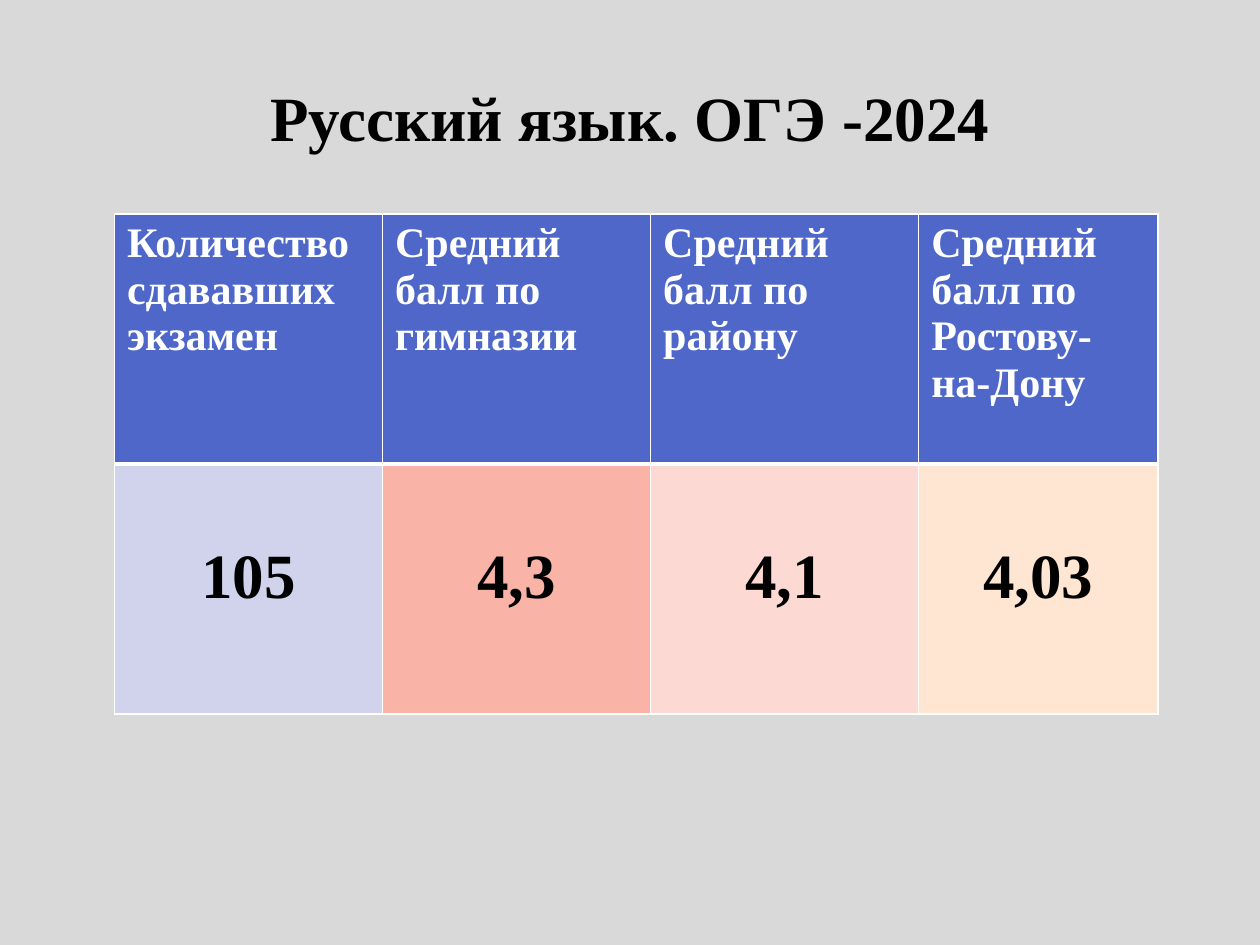
"""Build the slide with the Russian language exam results table."""
import dataclasses

import pptx
import pptx.dml.color
import pptx.enum.text
import pptx.oxml
import pptx.oxml.ns
import pptx.table
import pptx.text.text
import pptx.util

Pt = pptx.util.Pt
ALIGN = pptx.enum.text.PP_ALIGN
ANCHOR = pptx.enum.text.MSO_ANCHOR
FONT = "Times New Roman"
WHITE = "FFFFFF"
BLACK = "000000"
HEADER_FILL = "4E67C8"
ROW_HEIGHT = 142.8
THIN, THICK = 1, 3


@dataclasses.dataclass(frozen=True)
class Column:
    heading: str
    value: str
    value_fill: str
    width: float


COLUMNS = [
    Column("Количество сдававших экзамен", "105", "D0D3EB", 153.2),
    Column("Средний балл по гимназии", "4,3", "F9B3A7", 153.2),
    Column("Средний балл по району", "4,1", "FCD9D3", 153.2),
    Column("Средний балл по Ростову-на-Дону", "4,03", "FFE6D3", 136.8),
]


def color(value: str) -> pptx.dml.color.RGBColor:
    return pptx.dml.color.RGBColor.from_string(value)


def write(frame: pptx.text.text.TextFrame, text: str, size: float,
          ink: str, align: ALIGN) -> None:
    frame.text = text
    paragraph = frame.paragraphs[0]
    paragraph.alignment = align
    font = paragraph.runs[0].font
    font.name, font.size, font.bold = FONT, Pt(size), True
    font.color.rgb = color(ink)


def set_borders(cell: pptx.table._Cell, top: float, bottom: float) -> None:
    widths = {"lnL": THIN, "lnR": THIN, "lnT": top, "lnB": bottom}
    properties = cell._tc.get_or_add_tcPr()
    for position, (side, width) in enumerate(widths.items()):
        line = pptx.oxml.parse_xml(
            f'<a:{side} {pptx.oxml.ns.nsdecls("a")} w="{Pt(width)}">'
            f'<a:solidFill><a:srgbClr val="{WHITE}"/></a:solidFill></a:{side}>'
        )
        properties.insert(position, line)


def paint(cell: pptx.table._Cell, fill: str) -> None:
    cell.fill.solid()
    cell.fill.fore_color.rgb = color(fill)
    cell.vertical_anchor = ANCHOR.TOP


def fill_column(table: pptx.table.Table, index: int, column: Column) -> None:
    table.columns[index].width = Pt(column.width)
    header, value = table.cell(0, index), table.cell(1, index)
    paint(header, HEADER_FILL)
    write(header.text_frame, column.heading, 24, WHITE, ALIGN.LEFT)
    set_borders(header, THIN, THICK)
    paint(value, column.value_fill)
    value.margin_top = Pt(45)
    write(value.text_frame, column.value, 36, BLACK, ALIGN.CENTER)
    set_borders(value, THICK, THIN)


def main() -> None:
    deck = pptx.Presentation()
    deck.slide_width, deck.slide_height = Pt(720), Pt(540)
    slide = deck.slides.add_slide(deck.slide_layouts.get_by_name("Title Only"))
    slide.background.fill.solid()
    slide.background.fill.fore_color.rgb = color("D9D9D9")

    title = slide.shapes.title
    title.left, title.top = Pt(36), Pt(21.6)
    title.width, title.height = Pt(648), Pt(90)
    title.text_frame.vertical_anchor = ANCHOR.MIDDLE
    write(title.text_frame, "Русский язык. ОГЭ -2024", 36, BLACK, ALIGN.CENTER)

    table = slide.shapes.add_table(
        2, len(COLUMNS), Pt(65.4), Pt(122.4),
        Pt(sum(column.width for column in COLUMNS)), Pt(2 * ROW_HEIGHT),
    ).table
    for row in table.rows:
        row.height = Pt(ROW_HEIGHT)
    for index, column in enumerate(COLUMNS):
        fill_column(table, index, column)
    deck.save("out.pptx")


if __name__ == "__main__":
    main()
